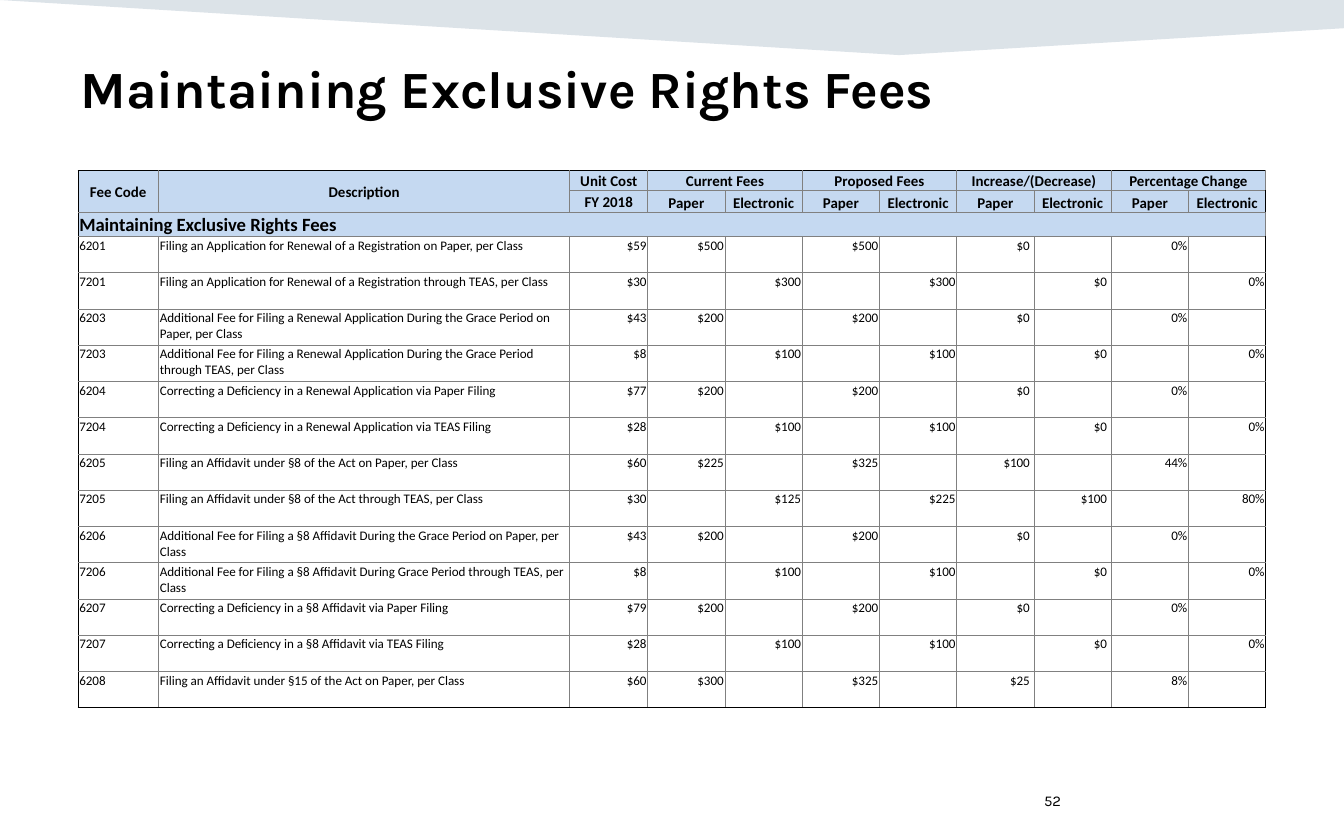
from lxml import etree
from pptx import Presentation
from pptx.dml.color import RGBColor
from pptx.enum.text import MSO_ANCHOR, MSO_AUTO_SIZE, PP_ALIGN
from pptx.oxml import parse_xml
from pptx.oxml.ns import nsdecls, qn
from pptx.util import Inches, Pt

BLACK = RGBColor(0x00, 0x00, 0x00)
GRAY = RGBColor(0x80, 0x80, 0x80)
HEADER_BLUE = RGBColor(0xC5, 0xD9, 0xF1)
BAND_BLUE = RGBColor(0x16, 0x44, 0x69)
LEFT, CENTER, RIGHT = PP_ALIGN.LEFT, PP_ALIGN.CENTER, PP_ALIGN.RIGHT
TOP, MIDDLE, BOTTOM = MSO_ANCHOR.TOP, MSO_ANCHOR.MIDDLE, MSO_ANCHOR.BOTTOM

TITLE = "Maintaining Exclusive Rights Fees"
FEE_GROUPS = ["Current Fees", "Proposed Fees", "Increase/(Decrease)", "Percentage Change"]
# Fee code, description, unit cost, current fee, proposed fee, increase, percentage change
FEES = [
    ("6201", "Filing an Application for Renewal of a Registration on Paper, per Class",
     "$59", "$500", "$500", "$0 ", "0%"),
    ("7201", "Filing an Application for Renewal of a Registration through TEAS, per Class",
     "$30", "$300", "$300", "$0 ", "0%"),
    ("6203", "Additional Fee for Filing a Renewal Application During the Grace Period on Paper, per Class",
     "$43", "$200", "$200", "$0 ", "0%"),
    ("7203", "Additional Fee for Filing a Renewal Application During the Grace Period through TEAS, per Class",
     "$8", "$100", "$100", "$0 ", "0%"),
    ("6204", "Correcting a Deficiency in a Renewal Application via Paper Filing",
     "$77", "$200", "$200", "$0 ", "0%"),
    ("7204", "Correcting a Deficiency in a Renewal Application via TEAS Filing",
     "$28", "$100", "$100", "$0 ", "0%"),
    ("6205", "Filing an Affidavit under §8 of the Act on Paper, per Class",
     "$60", "$225", "$325", "$100 ", "44%"),
    ("7205", "Filing an Affidavit under §8 of the Act through TEAS, per Class",
     "$30", "$125", "$225", "$100 ", "80%"),
    ("6206", "Additional Fee for Filing a §8 Affidavit During the Grace Period on Paper, per Class",
     "$43", "$200", "$200", "$0 ", "0%"),
    ("7206", "Additional Fee for Filing a §8 Affidavit During Grace Period through TEAS, per Class",
     "$8", "$100", "$100", "$0 ", "0%"),
    ("6207", "Correcting a Deficiency in a §8 Affidavit via Paper Filing",
     "$79", "$200", "$200", "$0 ", "0%"),
    ("7207", "Correcting a Deficiency in a §8 Affidavit via TEAS Filing",
     "$28", "$100", "$100", "$0 ", "0%"),
    ("6208", "Filing an Affidavit under §15 of the Act on Paper, per Class",
     "$60", "$300", "$325", "$25 ", "8%"),
]


def add_text(paragraph, text, font_name, size, bold=False):
    run = paragraph.add_run()
    run.text = text
    run.font.name = font_name
    run.font.size = Pt(size)
    run.font.bold = bold
    run.font.color.rgb = BLACK


def set_borders(cell, colors):
    """Draw half-point borders; colors go left, right, top, bottom."""
    properties = cell._tc.get_or_add_tcPr()
    for index, (side, color) in enumerate(zip("LRTB", colors)):
        properties.insert(index, parse_xml(
            f'<a:ln{side} {nsdecls("a")} w="{Pt(0.5)}"><a:solidFill>'
            f'<a:srgbClr val="{color}"/></a:solidFill></a:ln{side}>'))


presentation = Presentation()
presentation.slide_width = Inches(10)
presentation.slide_height = Inches(6.25)
slide = presentation.slides.add_slide(presentation.slide_layouts[5])

# Band across the top
builder = slide.shapes.build_freeform(0, 0, scale=1.0)
builder.add_line_segments([(Inches(10), 0), (Inches(10), Inches(0.21)),
                           (Inches(6.69), Inches(0.41))], close=True)
band = builder.convert_to_shape()
band.shadow.inherit = False
band.fill.solid()
band.fill.fore_color.rgb = BAND_BLUE
band_color = band._element.spPr.find(qn("a:solidFill"))[0]
etree.SubElement(band_color, qn("a:alpha"), val="15000")
band.line.fill.background()
slide.shapes._spTree.insert(2, band._element)

# Title
title = slide.shapes.title
title.left, title.top = Inches(0.5), Inches(0.35)
title.width, title.height = Inches(7.55), Inches(0.61)
title.text_frame.auto_size = MSO_AUTO_SIZE.NONE
title.text_frame.vertical_anchor = MIDDLE
title.text_frame.paragraphs[0].alignment = LEFT
add_text(title.text_frame.paragraphs[0], TITLE, "Karla", 28, bold=True)

# Slide number
number_box = slide.shapes.add_textbox(Inches(7.67), Inches(5.79), Inches(2.33), Inches(0.33))
number_box.text_frame.word_wrap = True
number_box.text_frame.vertical_anchor = MIDDLE
add_text(number_box.text_frame.paragraphs[0], "52", "Karla", 8)

# Table contents: paper fees have codes starting with 6, electronic ones with 7
rows = [["Fee Code", "Description", "Unit Cost"], ["", "", "FY 2018"], [TITLE] + [""] * 10]
for group in FEE_GROUPS:
    rows[0] += [group, ""]
    rows[1] += ["Paper", "Electronic"]
for code, description, unit_cost, *amounts in FEES:
    row = [code, description, unit_cost]
    for amount in amounts:
        row += [amount, ""] if code.startswith("6") else ["", amount]
    rows.append(row)

lead_widths = [0.6, 3.06, 0.58]
fee_width = (8.84 - sum(lead_widths)) / 8
column_widths = lead_widths + [fee_width] * 8
row_heights = [0.15, 0.16, 0.18] + [0.27] * len(FEES)
last_row, last_column = len(rows) - 1, len(column_widths) - 1

table = slide.shapes.add_table(len(rows), len(column_widths), Inches(0.58), Inches(1.27),
                               Inches(8.84), Inches(4)).table
table.first_row = False
table.horz_banding = False
for column, width in zip(table.columns, column_widths):
    column.width = Inches(width)
for table_row, height in zip(table.rows, row_heights):
    table_row.height = Inches(height)

for r, row in enumerate(rows):
    for c, text in enumerate(row):
        cell = table.cell(r, c)
        cell.margin_left = cell.margin_right = cell.margin_top = Inches(0.01)
        cell.margin_bottom = 0
        if r < 3:
            cell.fill.solid()
            cell.fill.fore_color.rgb = HEADER_BLUE
        else:
            cell.fill.background()
        set_borders(cell, [BLACK if on_edge else GRAY for on_edge in
                           (c == 0, c == last_column, r == 0, r == last_row)])
        paragraph = cell.text_frame.paragraphs[0]
        if r < 2:
            cell.vertical_anchor = BOTTOM if r == 1 and c > 2 else MIDDLE
            paragraph.alignment = CENTER
        else:
            cell.vertical_anchor = TOP
            paragraph.alignment = RIGHT if c > 1 else LEFT
        size = (8, 8, 10)[r] if r < 3 else 7
        if text:
            add_text(paragraph, text, "Calibri", size, bold=r < 3)
        else:
            etree.SubElement(paragraph._p, qn("a:endParaRPr"), sz=str(size * 100))

for c in (0, 1):
    table.cell(0, c).merge(table.cell(1, c))
for c in range(3, last_column, 2):
    table.cell(0, c).merge(table.cell(0, c + 1))
table.cell(2, 0).merge(table.cell(2, last_column))

presentation.save("out.pptx")
